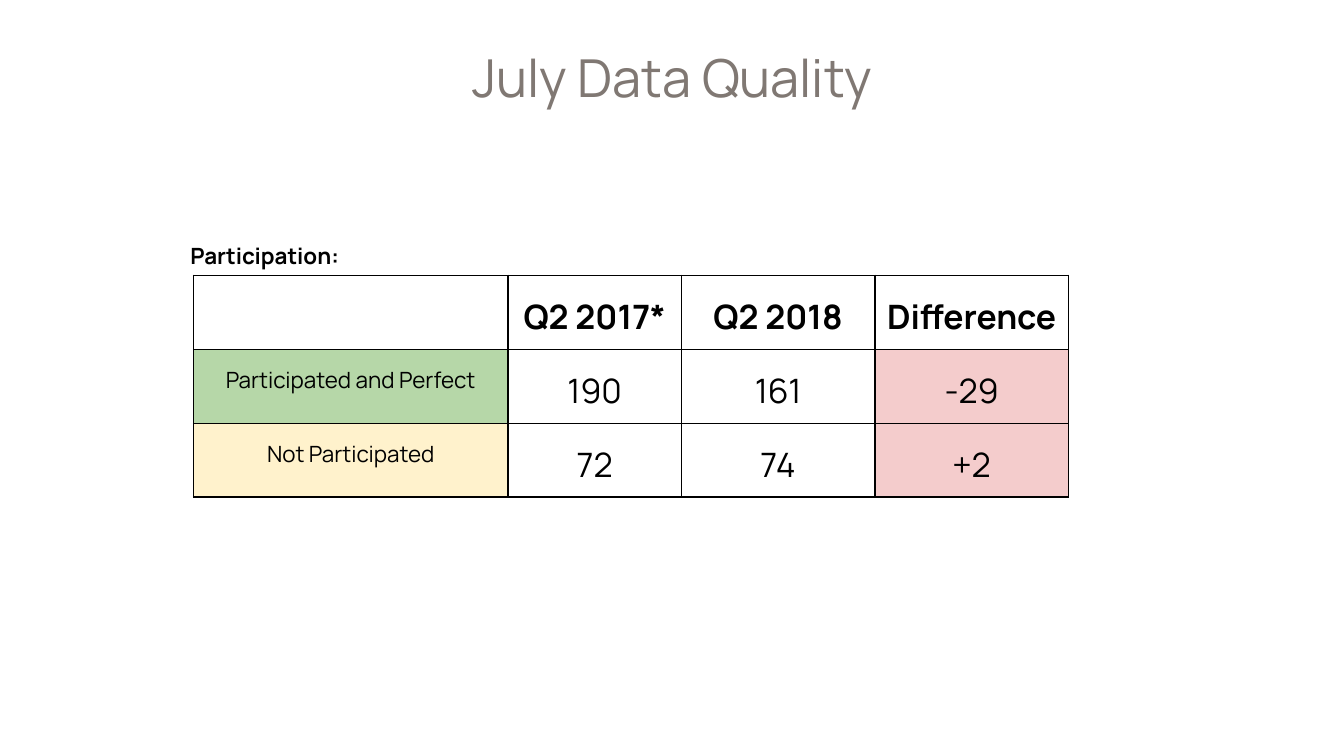
from lxml import etree
from pptx import Presentation
from pptx.dml.color import RGBColor
from pptx.enum.text import MSO_ANCHOR, PP_ALIGN
from pptx.oxml.ns import qn
from pptx.util import Inches, Pt

CENTER = PP_ALIGN.CENTER
TOP, MIDDLE = MSO_ANCHOR.TOP, MSO_ANCHOR.MIDDLE
FONT = "Manrope"
BLACK, GREY = "000000", "807873"
GREEN, YELLOW, RED = "B6D7A8", "FFF2CC", "F4CCCC"


def style_text(text_frame, text, size, color, bold=False, spacing=1.0):
    paragraph = text_frame.paragraphs[0]
    paragraph.text = text
    paragraph.alignment = CENTER
    paragraph.line_spacing = spacing
    paragraph.font.name = FONT
    paragraph.font.size = Pt(size)
    paragraph.font.bold = bold
    paragraph.font.color.rgb = RGBColor.from_string(color)


def add_borders(cell):
    """Draw a 1 pt black line on all four sides; call before setting the fill."""
    properties = cell._tc.get_or_add_tcPr()
    for side in ("a:lnL", "a:lnR", "a:lnT", "a:lnB"):
        line = etree.SubElement(properties, qn(side), w=str(Pt(1)))
        fill = etree.SubElement(line, qn("a:solidFill"))
        etree.SubElement(fill, qn("a:srgbClr"), val=BLACK)


presentation = Presentation()
presentation.slide_width = Inches(10)
presentation.slide_height = Inches(10) * 9 // 16
blank_layout = presentation.slide_layouts[6]
slide = presentation.slides.add_slide(blank_layout)

# Title
title = slide.shapes.add_textbox(Inches(0.34), Inches(0.24), Inches(9.32), Inches(0.63))
title_frame = title.text_frame
title_frame.word_wrap = True
title_frame.vertical_anchor = TOP
title_frame.margin_top = title_frame.margin_bottom = Inches(0.1)
style_text(title_frame, "July Data Quality", 28, GREY)

# Participation table
rows = [
    ("", "Q2 2017*", "Q2 2018", "Difference"),
    ("Participated and Perfect", "190", "161", "-29"),
    ("Not Participated", "72", "74", "+2"),
]
column_widths = [2.34, 1.29, 1.44, 1.44]
row_height = 0.55
fills = {(1, 0): GREEN, (2, 0): YELLOW, (1, 3): RED, (2, 3): RED}

table = slide.shapes.add_table(
    len(rows), len(column_widths), Inches(1.44), Inches(2.05),
    Inches(sum(column_widths)), Inches(row_height * len(rows)),
).table
table.first_row = False
table.horz_banding = False
for column, width in zip(table.columns, column_widths):
    column.width = Inches(width)

for row_index, values in enumerate(rows):
    for column_index, value in enumerate(values):
        cell = table.cell(row_index, column_index)
        cell.margin_left = cell.margin_right = Inches(0.07)
        cell.margin_top = cell.margin_bottom = Inches(0.07)
        add_borders(cell)
        fill_color = fills.get((row_index, column_index))
        if fill_color:
            cell.fill.solid()
            cell.fill.fore_color.rgb = RGBColor.from_string(fill_color)
        else:
            cell.fill.background()
        is_header = row_index == 0
        size = 12 if column_index == 0 and not is_header else 18
        style_text(cell.text_frame, value, size, BLACK, bold=is_header, spacing=1.2)

# Table label
label = slide.shapes.add_textbox(Inches(0.33), Inches(0.33), Inches(3.28), Inches(3.28))
label_frame = label.text_frame
label_frame.word_wrap = True
label_frame.vertical_anchor = MIDDLE
label_frame.margin_top = Inches(0.1)
label_frame.margin_bottom = Inches(0.32)
style_text(label_frame, "Participation:", 12, BLACK, bold=True, spacing=1.38)

presentation.save("out.pptx")
